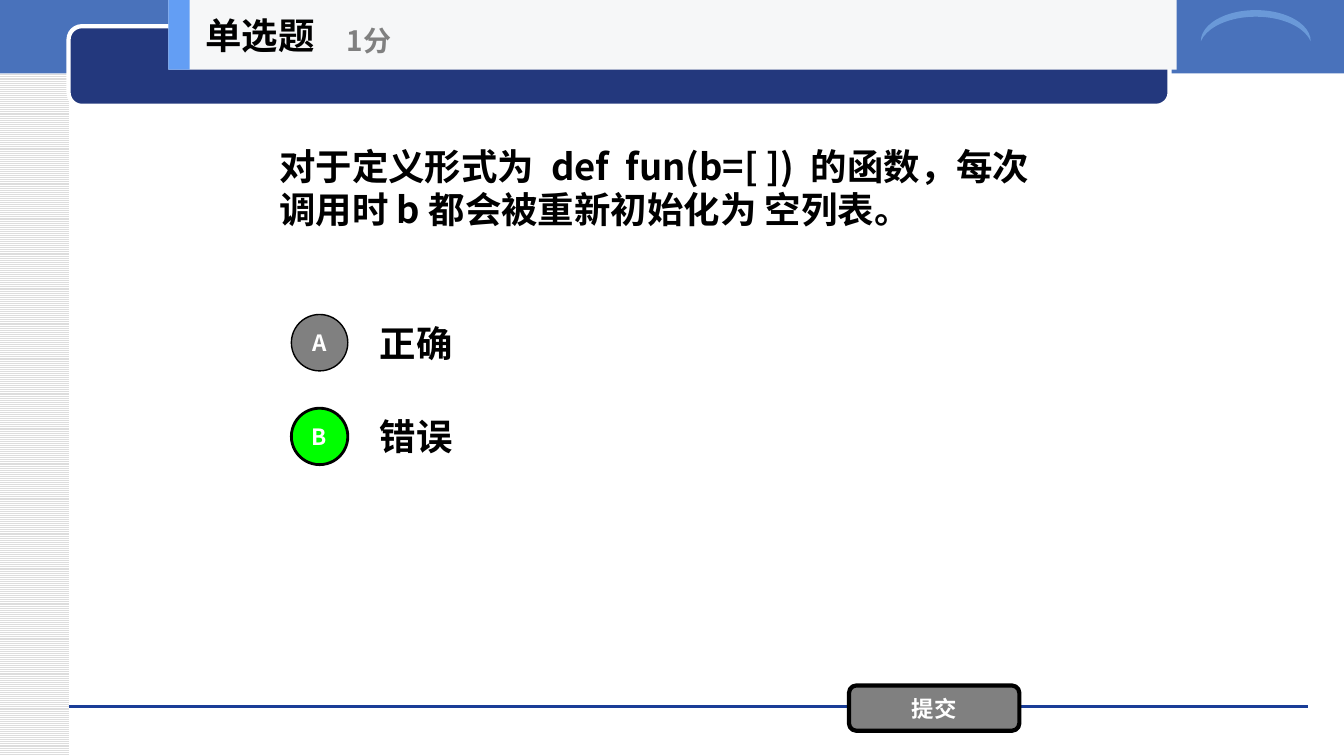
from dataclasses import dataclass

from lxml import etree
from pptx import Presentation
from pptx.dml.color import RGBColor
from pptx.enum.dml import MSO_PATTERN
from pptx.enum.shapes import MSO_CONNECTOR, MSO_SHAPE
from pptx.enum.text import MSO_ANCHOR, MSO_AUTO_SIZE, PP_ALIGN
from pptx.oxml.ns import qn
from pptx.shapes.autoshape import Shape
from pptx.util import Inches, Pt

RECT = MSO_SHAPE.RECTANGLE
ROUND = MSO_SHAPE.ROUNDED_RECTANGLE
OVAL = MSO_SHAPE.OVAL
MOON = MSO_SHAPE.MOON
STRAIGHT = MSO_CONNECTOR.STRAIGHT
STRIPES = MSO_PATTERN.LIGHT_HORIZONTAL
MIDDLE = MSO_ANCHOR.MIDDLE
LEFT = PP_ALIGN.LEFT
CENTER = PP_ALIGN.CENTER
FIXED = MSO_AUTO_SIZE.NONE

FONT = "Noto Sans CJK SC"
COLORS = {
    "black": "000000",
    "white": "FFFFFF",
    "gray": "808080",
    "stripe": "DDDDDD",
    "band": "4972BB",
    "navy": "23387D",
    "rule": "1A3D97",
    "moon": "6A99D8",
    "green": "00FF00",
    "pale": "F6F7F8",
    "accent": "639EF4",
}


@dataclass
class Box:
    left: float
    top: float
    width: float
    height: float


@dataclass
class Option:
    letter: str
    label: str
    fill: str
    border: float


OPTIONS = [
    Option("A", "正确", "gray", 1),
    Option("B", "错误", "green", 2),
]
OPTION_TOP = 3.05
OPTION_STEP = 0.93


def color(name: str) -> RGBColor:
    return RGBColor.from_string(COLORS[name])


def place(shape: Shape, box: Box) -> None:
    shape.left, shape.top = Inches(box.left), Inches(box.top)
    shape.width, shape.height = Inches(box.width), Inches(box.height)


def write(shape: Shape, text: str, size: int, ink: str,
          align: PP_ALIGN = LEFT, wrap: bool = True) -> None:
    frame = shape.text_frame
    frame.auto_size = FIXED
    frame.word_wrap = wrap
    frame.vertical_anchor = MIDDLE
    frame.text = text
    para = frame.paragraphs[0]
    para.alignment = align
    font = para.font
    font.name, font.size, font.bold = FONT, Pt(size), True
    font.color.rgb = color(ink)
    props = para._p.pPr.find(qn("a:defRPr"))
    etree.SubElement(props, qn("a:ea"), typeface=FONT)


def add_box(shapes, kind: MSO_SHAPE, box: Box, fill: str,
            line: str = "", width: float = 0) -> Shape:
    shape = shapes.add_shape(kind, 0, 0, 0, 0)
    place(shape, box)
    shape.shadow.inherit = False
    shape.fill.solid()
    shape.fill.fore_color.rgb = color(fill)
    if line:
        shape.line.color.rgb = color(line)
        shape.line.width = Pt(width)
    else:
        shape.line.fill.background()
    return shape


def add_label(shapes, box: Box, text: str, size: int, ink: str,
              wrap: bool = True) -> None:
    label = shapes.add_textbox(0, 0, 0, 0)
    place(label, box)
    write(label, text, size, ink, wrap=wrap)


def add_frame(shapes) -> None:
    side = add_box(shapes, RECT, Box(0, 0, 0.68, 7.5), "white")
    side.fill.patterned()
    side.fill.pattern = STRIPES
    side.fill.fore_color.rgb = color("stripe")
    side.fill.back_color.rgb = color("white")

    add_box(shapes, RECT, Box(0, -0.03, 13.33, 0.76), "band")

    rule = shapes.add_connector(STRAIGHT, Inches(0.68), Inches(7.01),
                                Inches(12.97), Inches(7.01))
    rule.line.color.rgb = color("rule")
    rule.line.width = Pt(0)
    etree.SubElement(rule._element.spPr, qn("a:effectLst"))

    panel = add_box(shapes, ROUND, Box(0.68, 0.26, 10.92, 0.79),
                    "navy", "white", 3)
    panel.adjustments[0] = 0.167

    moon = add_box(shapes, MOON, Box(12.3, -0.29, 0.31, 1.09), "moon")
    moon.adjustments[0] = 0.212
    moon.rotation = 90


def add_option(shapes, option: Option, top: float) -> None:
    add_label(shapes, Box(3.67, top, 7, 0.7), option.label, 26, "black")
    badge = add_box(shapes, OVAL, Box(2.89, top + 0.07, 0.56, 0.56),
                    option.fill, "black", option.border)
    write(badge, option.letter, 16, "white", CENTER)


def add_header(shapes) -> None:
    group = shapes.add_group_shape().shapes
    add_box(group, RECT, Box(1.67, 0, 10, 0.69), "pale")
    add_box(group, RECT, Box(1.67, 0, 0.21, 0.69), "accent")
    add_label(group, Box(1.94, 0, 2.08, 0.69), "单选题", 26, "black", False)
    add_label(group, Box(3.34, 0.12, 2.5, 0.56), "1分", 20, "gray", False)


def main() -> None:
    deck = Presentation()
    deck.slide_width, deck.slide_height = Inches(13.33), Inches(7.5)
    slide = deck.slides.add_slide(deck.slide_layouts[5])
    shapes = slide.shapes

    title = shapes.title
    place(title, Box(2.67, 0.69, 8, 2.34))
    write(title, "对于定义形式为  def  fun(b=[ ])  的函数，每次调用时 b 都会被重新初始化为 空列表。",
          26, "black")

    add_frame(shapes)
    for row, option in enumerate(OPTIONS):
        add_option(shapes, option, OPTION_TOP + row * OPTION_STEP)

    submit = add_box(shapes, ROUND, Box(8.42, 6.8, 1.69, 0.45),
                     "gray", "black", 3)
    write(submit, "提交", 16, "white", CENTER)
    add_header(shapes)
    deck.save("out.pptx")


if __name__ == "__main__":
    main()
